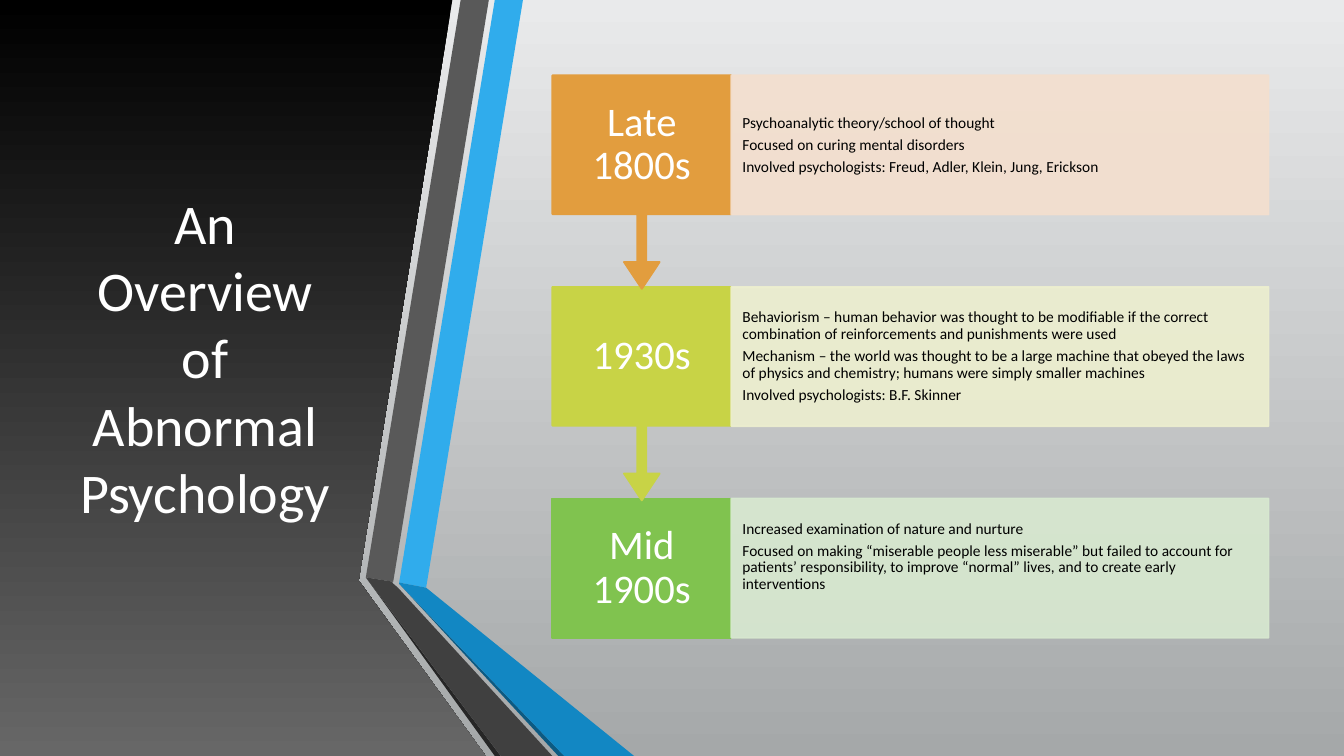
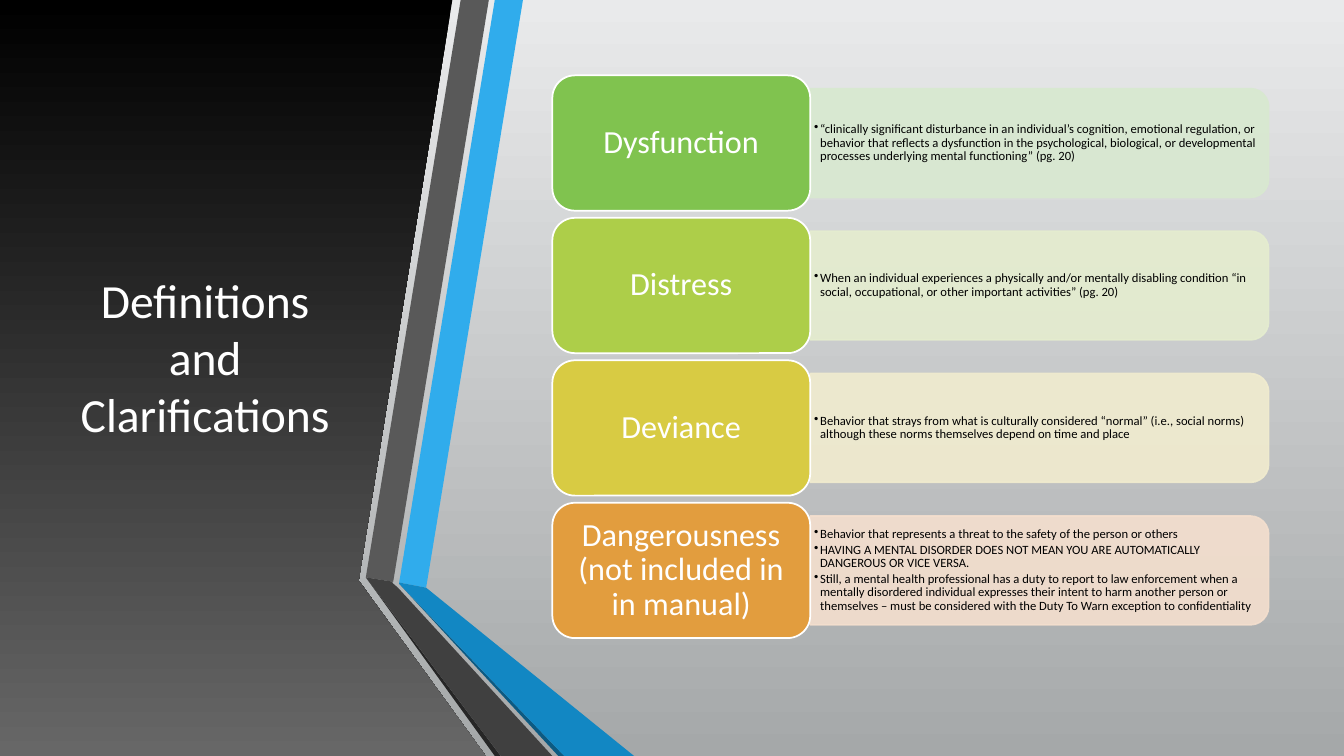
from dataclasses import dataclass

from lxml import etree
from pptx import Presentation
from pptx import util as u
from pptx.dml.color import RGBColor
from pptx.enum import shapes, text
from pptx.oxml.ns import qn
from pptx.shapes.autoshape import Shape
from pptx.slide import Slide

Cm, Pt = u.Cm, u.Pt
FONT = "Calibri"
WHITE, BLACK = "FFFFFF", "000000"
ORANGE, LIME, GREEN, LEAF, MUSTARD = "E29D3E", "C8D346", "80C34F", "ADCE49", "D8CB43"
PALE_ORANGE, PALE_LIME, PALE_GREEN = "F4DFCE", "EDEFCF", "D8E9D0"
PALE_LEAF, PALE_MUSTARD = "E5EDCF", "F1ECCF"

SLIDE_W, SLIDE_H = 33.87, 19.05
LEFT, TOP, RIGHT = 13.92, 1.9, 31.97  # diagram area, in cm


@dataclass
class Band:
    color: str
    points: list[tuple[float, float]]


@dataclass
class Row:
    label: str
    color: str
    pale: str
    lines: list[str]


@dataclass
class Style:
    size: float
    color: str
    insets: tuple[float, float, float, float]  # left, top, right, bottom in cm
    centered: bool = False
    spacing: float = 0.9
    after: float = 0.35  # space after, as a share of the size
    bullet: bool = False


TITLE_INSETS = (0.25, 0.13, 0.25, 0.13)
ERA = Style(29, WHITE, (0.33, 0.58, 0.33, 0.58), centered=True)
ERA_NOTES = Style(11, BLACK, (0.28, 0.38, 0.28, 0.38))
LAST_ERA_NOTES = Style(11, BLACK, (0.28, 0.38, 0.28, 0.94))  # sits a little higher
TERM = Style(23, WHITE, TITLE_INSETS, centered=True)
TERM_NOTES = Style(9, BLACK, (0.1, 0.05, 0.1, 0.05), after=0.15, bullet=True)

PANEL = Band(BLACK, [(0, 0), (11.4, 0), (9.04, 14.63), (12.24, SLIDE_H), (0, SLIDE_H)])
BANDS = [
    Band("30ACEC", [(10.06, 14.68), (10.74, 14.81), (13.18, 0), (12.47, 0)]),
    Band("595959", [(12.32, 0), (11.61, 0), (9.22, 14.55), (9.91, 14.66)]),
    Band("262626", [(9.22, 14.55), (12.47, SLIDE_H), (12.62, SLIDE_H)]),
    Band("0C5A82", [(10.06, 14.71), (14.07, SLIDE_H), (14.22, SLIDE_H)]),
    Band("1287C3", [(10.06, 14.71), (14.22, SLIDE_H), (15.98, SLIDE_H),
                    (10.74, 14.81), (10.06, 14.68)]),
    Band("404040", [(13.92, SLIDE_H), (10.03, 14.81), (9.88, 14.68), (9.91, 14.66),
                    (9.22, 14.55), (12.62, SLIDE_H)]),
]

ERAS = [
    Row("Late 1800s", ORANGE, PALE_ORANGE, [
        "Psychoanalytic theory/school of thought",
        "Focused on curing mental disorders",
        "Involved psychologists: Freud, Adler, Klein, Jung, Erickson"]),
    Row("1930s", LIME, PALE_LIME, [
        "Behaviorism – human behavior was thought to be modifiable if the correct "
        "combination of reinforcements and punishments were used",
        "Mechanism – the world was thought to be a large machine that obeyed the laws "
        "of physics and chemistry; humans were simply smaller machines",
        "Involved psychologists: B.F. Skinner"]),
    Row("Mid 1900s", GREEN, PALE_GREEN, [
        "Increased examination of nature and nurture",
        "Focused on making “miserable people less miserable” but failed to account for "
        "patients’ responsibility, to improve “normal” lives, and to create early "
        "interventions"]),
]

TERMS = [
    Row("Dysfunction", GREEN, PALE_GREEN, [
        "“clinically significant disturbance in an individual’s cognition, emotional "
        "regulation, or behavior that reflects a dysfunction in the psychological, "
        "biological, or developmental processes underlying mental functioning” (pg. 20)"]),
    Row("Distress", LEAF, PALE_LEAF, [
        "When an individual experiences a physically and/or mentally disabling condition "
        "“in social, occupational, or other important activities” (pg. 20)"]),
    Row("Deviance", MUSTARD, PALE_MUSTARD, [
        "Behavior that strays from what is culturally considered “normal” (i.e., social "
        "norms) although these norms themselves depend on time and place"]),
    Row("Dangerousness (not included in in manual)", ORANGE, PALE_ORANGE, [
        "Behavior that represents a threat to the safety of the person or others",
        "HAVING A MENTAL DISORDER DOES NOT MEAN YOU ARE AUTOMATICALLY DANGEROUS OR "
        "VICE VERSA.",
        "Still, a mental health professional has a duty to report to law enforcement when "
        "a mentally disordered individual expresses their intent to harm another person "
        "or themselves – must be considered with the Duty To Warn exception to "
        "confidentiality"]),
]


def rgb(value: str) -> RGBColor:
    return RGBColor.from_string(value)


def fill_gradient(fill, top: str, bottom: str) -> None:
    fill.gradient()
    fill.gradient_angle = 270
    for stop, color in zip(fill.gradient_stops, (top, bottom)):
        stop.color.rgb = rgb(color)


def write(sp: Shape, lines: list[str], style: Style) -> None:
    tf = sp.text_frame
    tf.text = "\n".join(lines)
    tf.word_wrap = True
    tf.vertical_anchor = text.MSO_ANCHOR.MIDDLE
    tf.margin_left, tf.margin_top, tf.margin_right, tf.margin_bottom = map(Cm, style.insets)
    for p in tf.paragraphs:
        p.alignment = text.PP_ALIGN.CENTER if style.centered else text.PP_ALIGN.LEFT
        p.line_spacing = style.spacing
        p.space_after = Pt(style.size * style.after)
        if style.bullet:
            pPr = p._p.get_or_add_pPr()
            pPr.set("marL", str(Cm(0.15)))
            pPr.set("indent", str(-Cm(0.15)))
            etree.SubElement(pPr, qn("a:buChar")).set("char", "•")
        for r in p.runs:
            r.font.name, r.font.size = FONT, Pt(style.size)
            r.font.color.rgb = rgb(style.color)


def add_box(s: Slide, kind: shapes.MSO_SHAPE, left: float, top: float, width: float,
            height: float, fill: str, line: str, alpha: int = 100) -> Shape:
    sp = s.shapes.add_shape(kind, Cm(left), Cm(top), Cm(width), Cm(height))
    sp.shadow.inherit = False
    sp.fill.solid()
    sp.fill.fore_color.rgb = rgb(fill)
    sp.line.color.rgb = rgb(line)
    sp.line.width = Pt(1.25)
    if alpha < 100:
        for color in sp._element.spPr.iter(qn("a:srgbClr")):
            etree.SubElement(color, qn("a:alpha")).set("val", str(alpha * 1000))
    return sp


def add_text(s: Slide, left: float, top: float, width: float, height: float,
             lines: list[str], style: Style) -> None:
    write(s.shapes.add_textbox(Cm(left), Cm(top), Cm(width), Cm(height)), lines, style)


def add_band(s: Slide, band: Band) -> Shape:
    points = [(Cm(x), Cm(y)) for x, y in band.points]
    builder = s.shapes.build_freeform(*points[0])
    builder.add_line_segments(points[1:], close=True)
    sp = builder.convert_to_shape()
    sp.shadow.inherit = False
    sp.fill.solid()
    sp.fill.fore_color.rgb = rgb(band.color)
    sp.line.fill.background()
    return sp


# Shared background, side panel, bands and title
def add_slide(prs, title: str, size: float) -> Slide:
    s = prs.slides.add_slide(prs.slide_layouts[6])
    fill_gradient(s.background.fill, "E9EAEB", "A5A8A9")
    fill_gradient(add_band(s, PANEL).fill, BLACK, "676767")
    add_text(s, 1.5, TOP, 7.34, 14.17, [title],
             Style(size, WHITE, TITLE_INSETS, centered=True, spacing=1.0, after=0))
    for band in BANDS:
        add_band(s, band)
    return s


# Timeline: each era points down to the next one
def add_timeline(s: Slide, rows: list[Row]) -> None:
    pitch, height, arrow_height, label_w = 5.33, 3.51, 5.38, 4.51
    notes_left = LEFT + label_w
    last = len(rows) - 1
    for i, row in reversed(list(enumerate(rows))):
        top = TOP + i * pitch
        if i == last:
            label = add_box(s, shapes.MSO_SHAPE.RECTANGLE, LEFT, top, label_w, height,
                            row.color, row.color)
        else:
            label = add_box(s, shapes.MSO_SHAPE.DOWN_ARROW_CALLOUT, LEFT, top, label_w,
                            arrow_height, row.color, row.color)
            for k, value in enumerate((0.05, 0.1, 0.15, 0.65)):
                label.adjustments[k] = value
        write(label, [row.label], ERA)
        notes = add_box(s, shapes.MSO_SHAPE.RECTANGLE, notes_left, top, RIGHT - notes_left,
                        height, row.pale, row.pale, alpha=90)
        write(notes, row.lines, LAST_ERA_NOTES if i == last else ERA_NOTES)


# Definitions: a rounded label with a pale pane to its right
def add_definitions(s: Slide, rows: list[Row]) -> None:
    pitch, height, label_w, pane_h, text_h = 3.59, 3.41, 6.5, 2.74, 2.46
    pane_left = LEFT + label_w
    pane_w = RIGHT - pane_left
    for i, row in enumerate(rows):
        top = TOP + i * pitch
        middle = top + height / 2
        # Turned a quarter, so width and height swap around the centre
        pane = add_box(s, shapes.MSO_SHAPE.ROUND_2_SAME_RECTANGLE,
                       pane_left + (pane_w - pane_h) / 2, middle - pane_w / 2,
                       pane_h, pane_w, row.pale, row.pale, alpha=90)
        pane.rotation = 90
        add_text(s, pane_left, middle - text_h / 2, pane_w - 0.13, text_h,
                 row.lines, TERM_NOTES)
        label = add_box(s, shapes.MSO_SHAPE.ROUNDED_RECTANGLE, LEFT, top, label_w, height,
                        row.color, WHITE)
        write(label, [row.label], TERM)


def main() -> None:
    prs = Presentation()
    prs.slide_width, prs.slide_height = Cm(SLIDE_W), Cm(SLIDE_H)
    add_timeline(add_slide(prs, "An Overview of Abnormal Psychology", 40), ERAS)
    add_definitions(add_slide(prs, "Definitions and Clarifications", 34), TERMS)
    prs.save("out.pptx")


if __name__ == "__main__":
    main()
